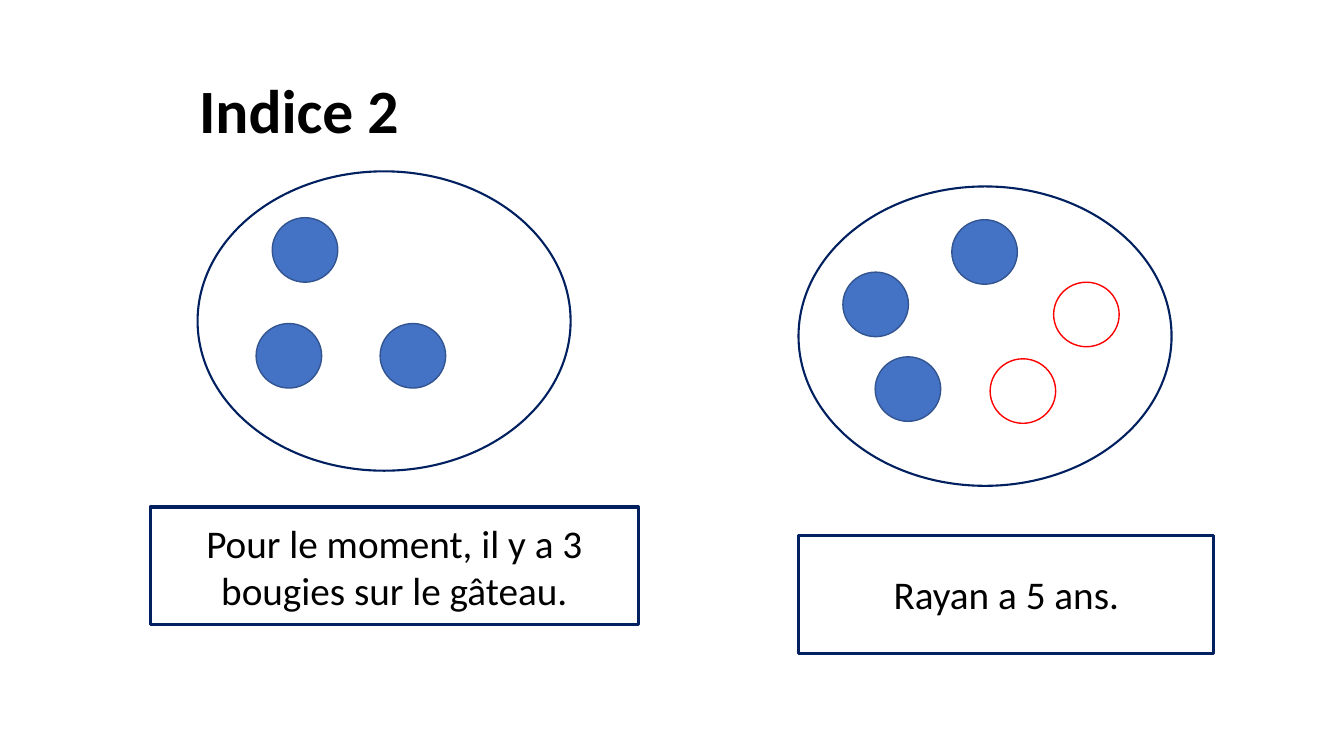
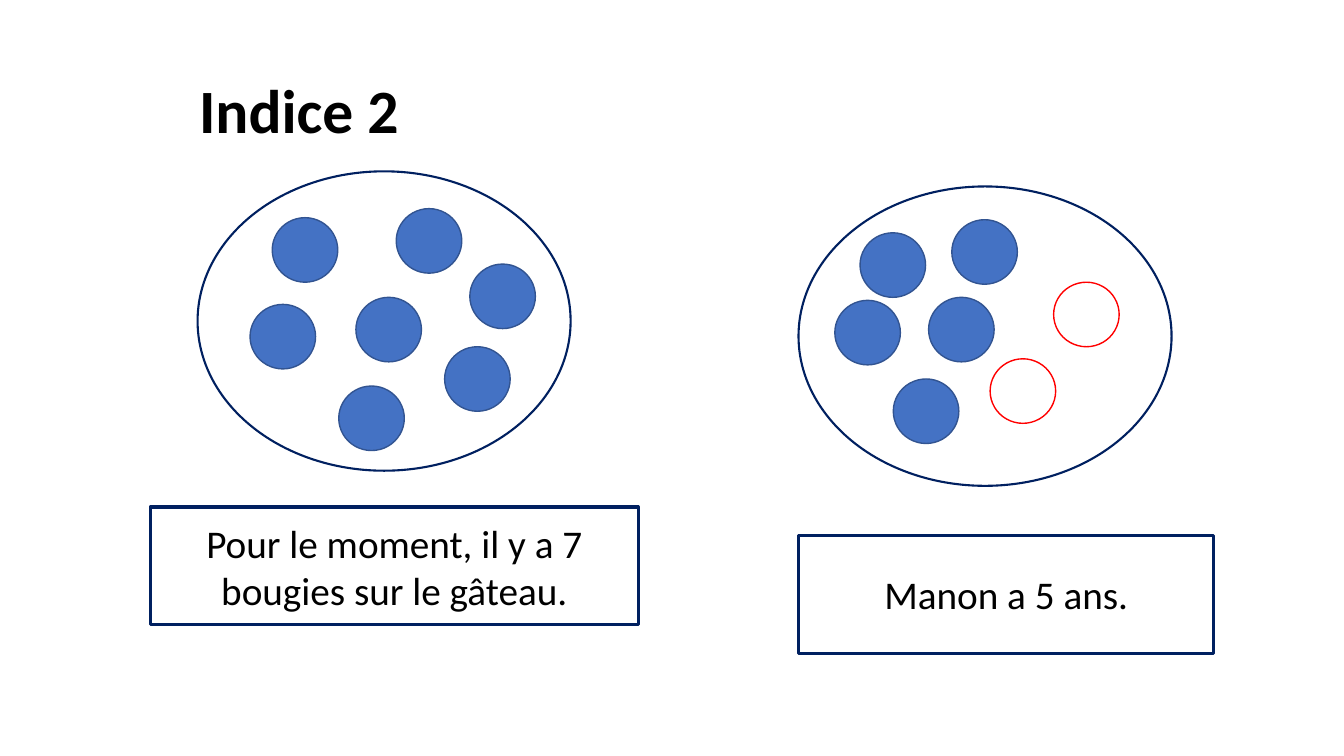
from pptx import Presentation
from pptx.dml.color import RGBColor
from pptx.enum.shapes import MSO_SHAPE
from pptx.enum.text import MSO_ANCHOR, PP_ALIGN
from pptx.util import Inches, Pt

WHITE, BLACK, NAVY = "FFFFFF", "000000", "002060"
BLUE, DARK_BLUE, RED = "4472C4", "325491", "FF0000"
FONT = "Calibri"
CAKE_SIZE = (3.7, 2.97)
CANDLE_SIZE = (0.65, 0.64)
MISSING_CANDLES = [(9.82, 3.56), (10.45, 2.8)]

CLUES = [
    {
        "now": "Pour le moment, il y a 3 bougies sur le gâteau.",
        "age": "Rayan a 5 ans.",
        "candles": [
            (2.7, 2.16), (2.54, 3.21), (3.77, 3.21),
            (8.68, 3.54), (8.36, 2.7), (9.44, 2.18),
        ],
    },
    {
        "now": "Pour le moment, il y a 7 bougies sur le gâteau.",
        "age": "Manon a 5 ans.",
        "candles": [
            (2.7, 2.16), (2.48, 3.02), (3.53, 2.95), (4.66, 2.62),
            (3.36, 3.83), (3.93, 2.07), (4.41, 3.44),
            (8.86, 3.76), (9.44, 2.18), (9.21, 2.95), (8.28, 2.98), (8.53, 2.31),
        ],
    },
]


def add_figure(slide, kind, position, size, fill, line, width):
    shape = slide.shapes.add_shape(kind, *map(Inches, position + size))
    shape.shadow.inherit = False
    shape.fill.solid()
    shape.fill.fore_color.rgb = RGBColor.from_string(fill)
    shape.line.color.rgb = RGBColor.from_string(line)
    shape.line.width = Pt(width)
    return shape


def write_text(shape, text, size, bold=False):
    """Set centred black text, wrapped inside the shape."""
    frame = shape.text_frame
    frame.text = text
    frame.word_wrap = True
    frame.vertical_anchor = MSO_ANCHOR.MIDDLE
    paragraph = frame.paragraphs[0]
    paragraph.alignment = PP_ALIGN.CENTER
    font = paragraph.runs[0].font
    font.name, font.size, font.bold = FONT, Pt(size), bold
    font.color.rgb = RGBColor.from_string(BLACK)


presentation = Presentation()
presentation.slide_width = Inches(13.33)
presentation.slide_height = Inches(7.5)

for clue in CLUES:
    slide = presentation.slides.add_slide(presentation.slide_layouts[6])

    title = slide.shapes.add_textbox(Inches(0.92), Inches(0.4), Inches(4.23), Inches(1.45))
    write_text(title, "Indice 2 ", 44, bold=True)
    title.text_frame.paragraphs[0].line_spacing = 0.9

    for position, size, text in [
        ((1.49, 5.03), (4.84, 1.17), clue["now"]),
        ((7.92, 5.31), (4.12, 1.17), clue["age"]),
    ]:
        caption = add_figure(slide, MSO_SHAPE.RECTANGLE, position, size, WHITE, NAVY, 2.25)
        write_text(caption, text, 28)

    for position in [(1.96, 1.7), (7.92, 1.85)]:
        add_figure(slide, MSO_SHAPE.OVAL, position, CAKE_SIZE, WHITE, NAVY, 1.5)

    for positions, fill, line in [
        (MISSING_CANDLES, WHITE, RED),
        (clue["candles"], BLUE, DARK_BLUE),
    ]:
        for position in positions:
            add_figure(slide, MSO_SHAPE.OVAL, position, CANDLE_SIZE, fill, line, 1)

presentation.save("out.pptx")
